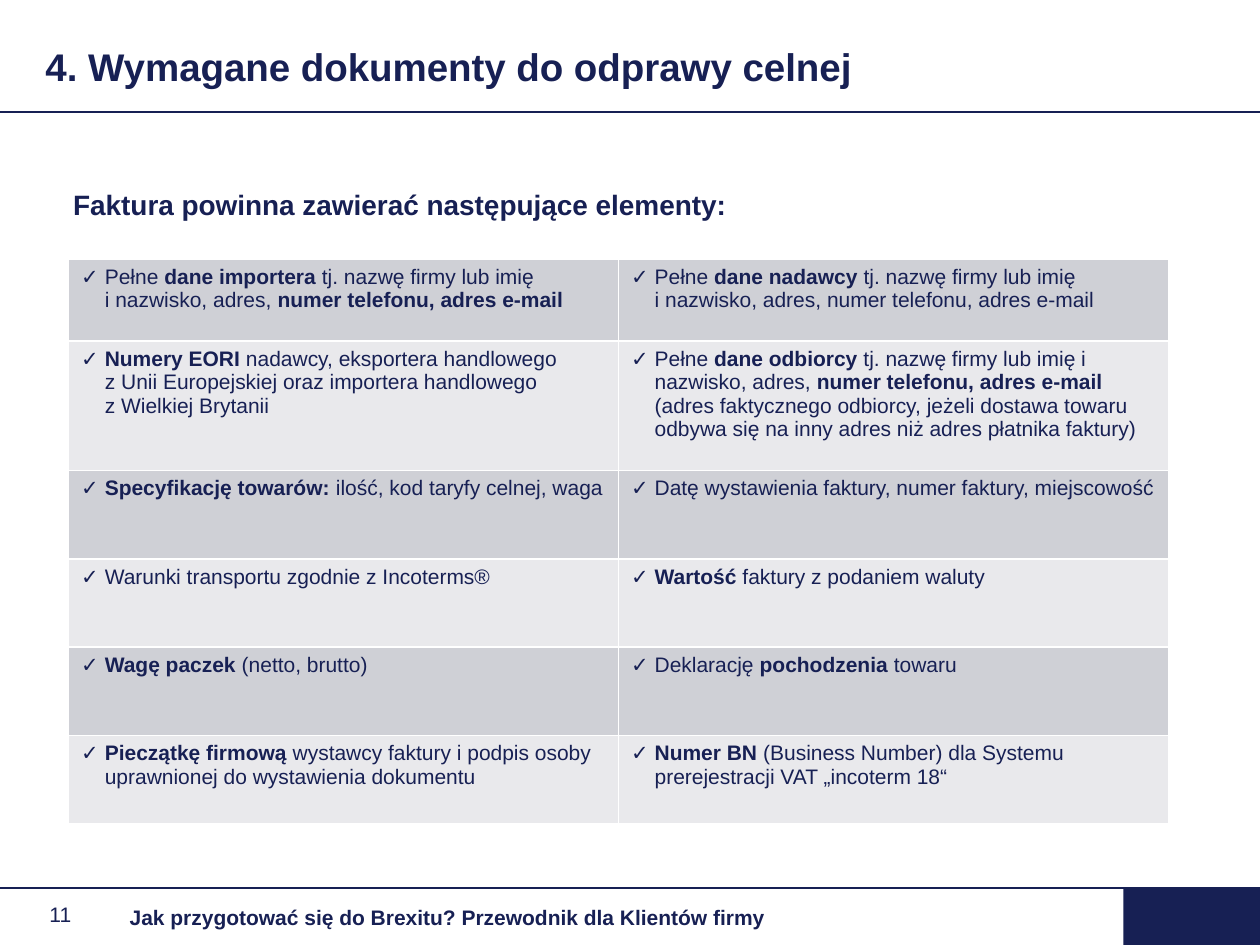
from lxml.etree import SubElement
from pptx import Presentation
from pptx.dml.color import RGBColor
from pptx.enum.shapes import MSO_CONNECTOR, MSO_SHAPE
from pptx.enum.text import MSO_ANCHOR, PP_ALIGN
from pptx.oxml.ns import qn
from pptx.util import Pt

NAVY = RGBColor(0x17, 0x20, 0x54)
DARK = RGBColor(0xCF, 0xD0, 0xD6)
LIGHT = RGBColor(0xE9, 0xE9, 0xEC)
WHITE = RGBColor(0xFF, 0xFF, 0xFF)
FONT = "Arial"
WIDE, HIGH = 720, 540

# Content: ** switches bold on and off
TITLE = "**4. Wymagane dokumenty do odprawy celnej**"
LEAD = "**Faktura powinna zawierać następujące elementy:**"
FOOTER = "**Jak przygotować się do Brexitu? Przewodnik dla Klientów firmy**"
NUMBER = "11"
ITEMS = [
    ("Pełne **dane importera** tj. nazwę firmy lub imię\n"
     "i nazwisko, adres, **numer telefonu, adres e-mail**",
     "Pełne **dane nadawcy** tj. nazwę firmy lub imię\n"
     "i nazwisko, adres, numer telefonu, adres e-mail"),
    ("**Numery EORI** nadawcy, eksportera handlowego\n"
     "z Unii Europejskiej oraz importera handlowego\nz Wielkiej Brytanii",
     "Pełne **dane odbiorcy** tj. nazwę firmy lub imię i nazwisko, adres, "
     "**numer telefonu, adres e-mail **(adres faktycznego odbiorcy, jeżeli dostawa "
     "towaru odbywa się na inny adres niż adres płatnika faktury)"),
    ("**Specyfikację towarów:** ilość, kod taryfy celnej, waga",
     "Datę wystawienia faktury, numer faktury, miejscowość"),
    ("Warunki transportu zgodnie z Incoterms®",
     "**Wartość** faktury z podaniem waluty"),
    ("**Wagę paczek** (netto, brutto)",
     "Deklarację **pochodzenia** towaru"),
    ("**Pieczątkę firmową** wystawcy faktury i podpis osoby "
     "uprawnionej do wystawienia dokumentu",
     "**Numer BN** (Business Number) dla Systemu prerejestracji VAT „incoterm 18“"),
]
ROWS = [46.9, 74, 50.5, 50.5, 50.5, 50.5]
COL = 314.2


def write(frame, text, size=12, align=PP_ALIGN.LEFT, space=None, bullet=None):
    para = frame.paragraphs[0]
    para.alignment = align
    para.line_spacing = space
    if bullet:
        props = para._p.get_or_add_pPr()
        props.set("marL", str(Pt(13.5)))
        props.set("indent", str(-Pt(13.5)))
        SubElement(props, qn("a:buFont"), typeface=FONT)
        SubElement(props, qn("a:buChar"), char=bullet)
    for part, chunk in enumerate(text.split("**")):
        for row, piece in enumerate(chunk.split("\n")):
            if row:
                para.add_line_break()
            if piece:
                run = para.add_run()
                run.text = piece
                font = run.font
                font.name, font.size, font.bold = FONT, Pt(size), part % 2 == 1
                font.color.rgb = NAVY


def label(text, left, top, width, height, inset=0, anchor=MSO_ANCHOR.MIDDLE, **style):
    box = slide.shapes.add_textbox(Pt(left), Pt(top), Pt(width), Pt(height))
    frame = box.text_frame
    frame.word_wrap = True
    frame.margin_left = Pt(inset)
    frame.vertical_anchor = anchor
    write(frame, text, **style)


def rule(top):
    line = slide.shapes.add_connector(
        MSO_CONNECTOR.STRAIGHT, 0, Pt(top), Pt(WIDE), Pt(top))
    line.line.color.rgb = NAVY
    line.line.width = Pt(1)
    SubElement(line._element.spPr, qn("a:effectLst"))


def border(cell):
    props = cell._tc.get_or_add_tcPr()
    for spot, side in enumerate(("lnL", "lnR", "lnT", "lnB")):
        edge = props.makeelement(qn("a:" + side), {"w": str(Pt(1))})
        paint = SubElement(edge, qn("a:solidFill"))
        SubElement(paint, qn("a:srgbClr"), val=str(WHITE))
        props.insert(spot, edge)


deck = Presentation()
deck.slide_width, deck.slide_height = Pt(WIDE), Pt(HIGH)
slide = deck.slides.add_slide(deck.slide_layouts[6])

# Rules and corner block
rule(64)
rule(507.5)
block = slide.shapes.add_shape(
    MSO_SHAPE.RECTANGLE, Pt(642), Pt(507.5), Pt(78), Pt(32.5))
block.shadow.inherit = False
block.fill.solid()
block.fill.fore_color.rgb = NAVY
block.line.fill.background()

# Heading, lead and footer
label(TITLE, 26, 20.5, 669, 34, size=22)
label(LEAD, 41.8, 94, 634, 54, anchor=MSO_ANCHOR.TOP, size=16,
      align=PP_ALIGN.JUSTIFY, space=1.5)
label(NUMBER, 28.3, 513.5, 39, 18)
label(FOOTER, 67, 515, 428.5, 18, inset=7.2)

# Table of invoice elements
table = slide.shapes.add_table(
    len(ITEMS), 2, Pt(39.2), Pt(148), Pt(2 * COL), Pt(sum(ROWS))).table
for column in table.columns:
    column.width = Pt(COL)
for row, pair in enumerate(ITEMS):
    table.rows[row].height = Pt(ROWS[row])
    for col, text in enumerate(pair):
        cell = table.cell(row, col)
        cell.fill.solid()
        cell.fill.fore_color.rgb = LIGHT if row % 2 else DARK
        border(cell)
        write(cell.text_frame, text, bullet="✓")

deck.save("out.pptx")
